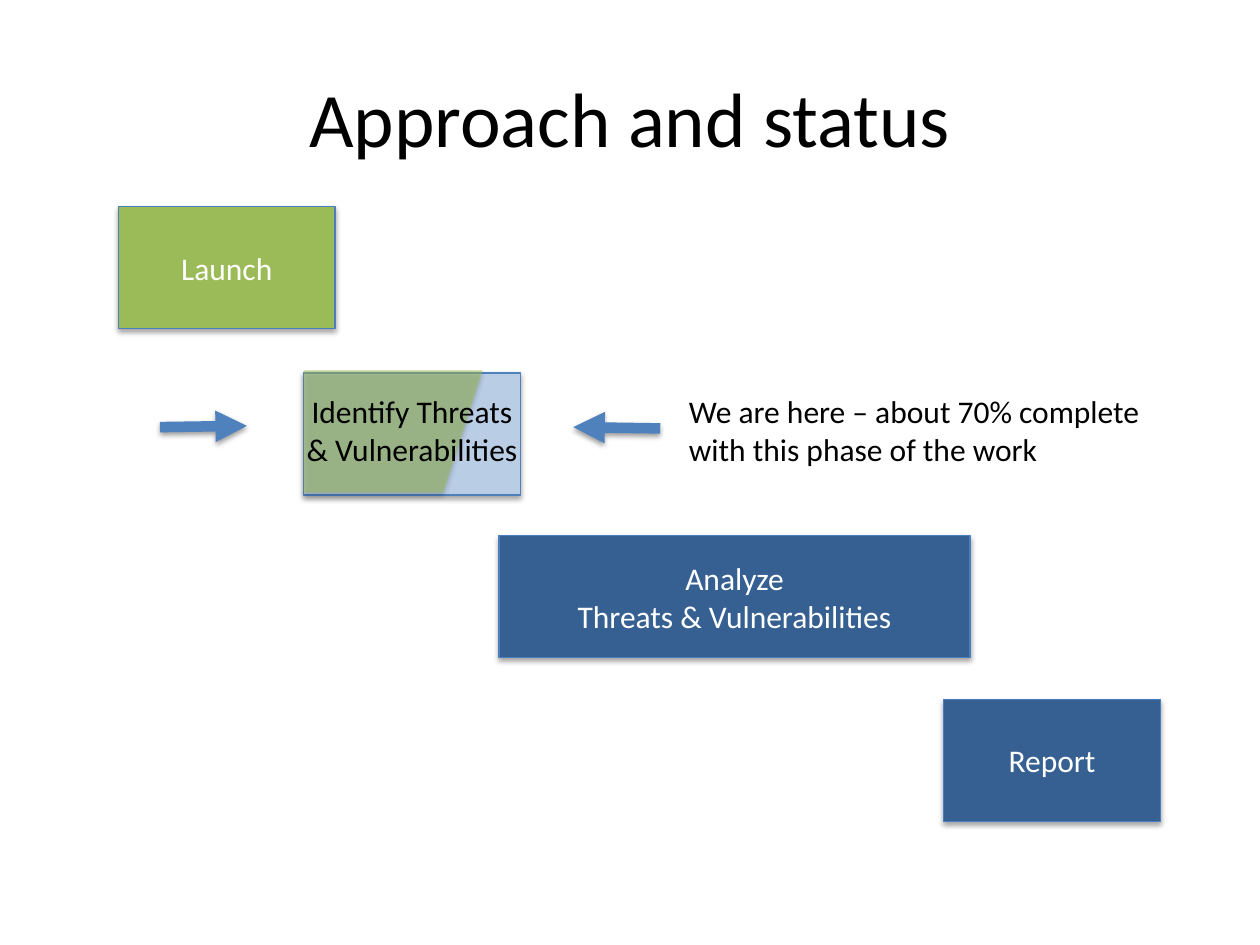
from lxml import etree
from pptx import Presentation
from pptx.dml.color import RGBColor
from pptx.enum.shapes import MSO_CONNECTOR, MSO_SHAPE
from pptx.enum.text import MSO_ANCHOR, MSO_AUTO_SIZE, PP_ALIGN
from pptx.oxml.ns import qn
from pptx.util import Inches, Pt

COLORS = {
    "black": "000000",
    "white": "FFFFFF",
    "done": "9BBB59",
    "current": "B9CDE5",
    "pending": "376092",
    "outline": "4B7EBC",
    "accent": "4F81BD",
}
FONT = "Calibri"
STEP_WIDTH, STEP_HEIGHT = 1.72, 0.97


def color(name):
    return RGBColor.from_string(COLORS[name])


def add_child(parent, tag, **attributes):
    return etree.SubElement(parent, qn(tag), attributes)


def add_shadow(properties, distance, opacity):
    effects = properties.find(qn("a:effectLst"))
    if effects is None:
        effects = add_child(properties, "a:effectLst")
    shadow = add_child(effects, "a:outerShdw", blurRad=str(Pt(3.1)),
                       dist=str(Pt(distance)), dir="5400000", rotWithShape="0")
    tint = add_child(shadow, "a:srgbClr", val=COLORS["black"])
    add_child(tint, "a:alpha", val=str(opacity * 1000))


def shade_shape(shape):
    shape.shadow.inherit = False
    add_shadow(shape._element.spPr, 1.8, 35)


def write(frame, lines, text_color, align, size=18):
    frame.word_wrap = True
    for index, line in enumerate(lines):
        para = frame.paragraphs[0] if index == 0 else frame.add_paragraph()
        para.alignment = align
        span = para.add_run()
        span.text = line
        span.font.name = FONT
        span.font.size = Pt(size)
        span.font.color.rgb = color(text_color)


def add_title(page, left, top, width, height):
    title = page.shapes.title
    title.left, title.top = Inches(left), Inches(top)
    title.width, title.height = Inches(width), Inches(height)
    title.text_frame.vertical_anchor = MSO_ANCHOR.MIDDLE
    write(title.text_frame, ["Approach and status"], "black", PP_ALIGN.CENTER, 44)


def add_step(page, left, top, fill, lines=(), width=STEP_WIDTH, outline="outline"):
    box = page.shapes.add_shape(MSO_SHAPE.RECTANGLE, Inches(left), Inches(top),
                                Inches(width), Inches(STEP_HEIGHT))
    box.fill.solid()
    box.fill.fore_color.rgb = color(fill)
    box.line.color.rgb = color(outline)
    box.line.width = Pt(0.75)
    shade_shape(box)
    box.text_frame.vertical_anchor = MSO_ANCHOR.MIDDLE
    write(box.text_frame, lines, "white", PP_ALIGN.CENTER)


def add_progress(page, left, top, top_width, bottom_width):
    right, bottom = left + top_width, top + STEP_HEIGHT
    corners = [(right, top), (left + bottom_width, bottom), (left, bottom)]
    builder = page.shapes.build_freeform(Inches(left), Inches(top))
    builder.add_line_segments([(Inches(x), Inches(y)) for x, y in corners])
    progress = builder.convert_to_shape()
    progress.fill.solid()
    progress.fill.fore_color.rgb = color("done")
    tint = progress._element.spPr.find(qn("a:solidFill"))[0]
    add_child(tint, "a:alpha", val="54000")
    progress.line.fill.background()
    shade_shape(progress)


def add_label(page, left, top, width, text, align):
    label = page.shapes.add_textbox(Inches(left), Inches(top), Inches(width), Inches(0.71))
    label.text_frame.auto_size = MSO_AUTO_SIZE.SHAPE_TO_FIT_TEXT
    write(label.text_frame, [text], "black", align)


def add_arrow(page, start, end):
    arrow = page.shapes.add_connector(MSO_CONNECTOR.STRAIGHT,
                                      *(Inches(value) for value in start + end))
    arrow.line.color.rgb = color("accent")
    arrow.line.width = Pt(6)
    properties = arrow._element.spPr
    add_child(properties.find(qn("a:ln")), "a:tailEnd", type="triangle")
    add_shadow(properties, 1.6, 38)


def add_current_step(page, left, top):
    add_step(page, left, top, "current", outline="accent")
    add_progress(page, left, top - 0.02, 1.42, 1.11)
    add_label(page, left - 0.08, top + 0.1, 1.88,
              "Identify Threats & Vulnerabilities", PP_ALIGN.CENTER)
    add_arrow(page, (left - 1.14, top + 0.43), (left - 0.45, top + 0.42))
    add_arrow(page, (left + 2.83, top + 0.44), (left + 2.14, top + 0.43))
    add_label(page, left + 2.96, top + 0.1, 3.83,
              "We are here – about 70% complete with this phase of the work", PP_ALIGN.LEFT)


def main():
    deck = Presentation()
    deck.slide_width, deck.slide_height = Inches(10), Inches(7.5)
    page = deck.slides.add_slide(deck.slide_layouts[5])
    add_title(page, 0.5, 0.3, 9, 1.25)
    add_step(page, 0.94, 1.64, "done", ["Launch"])
    add_step(page, 3.96, 4.25, "pending", ["Analyze", "Threats & Vulnerabilities"], width=3.74)
    add_step(page, 7.49, 5.55, "pending", ["Report"])
    add_current_step(page, 2.41, 2.96)
    deck.save("out.pptx")


if __name__ == "__main__":
    main()
